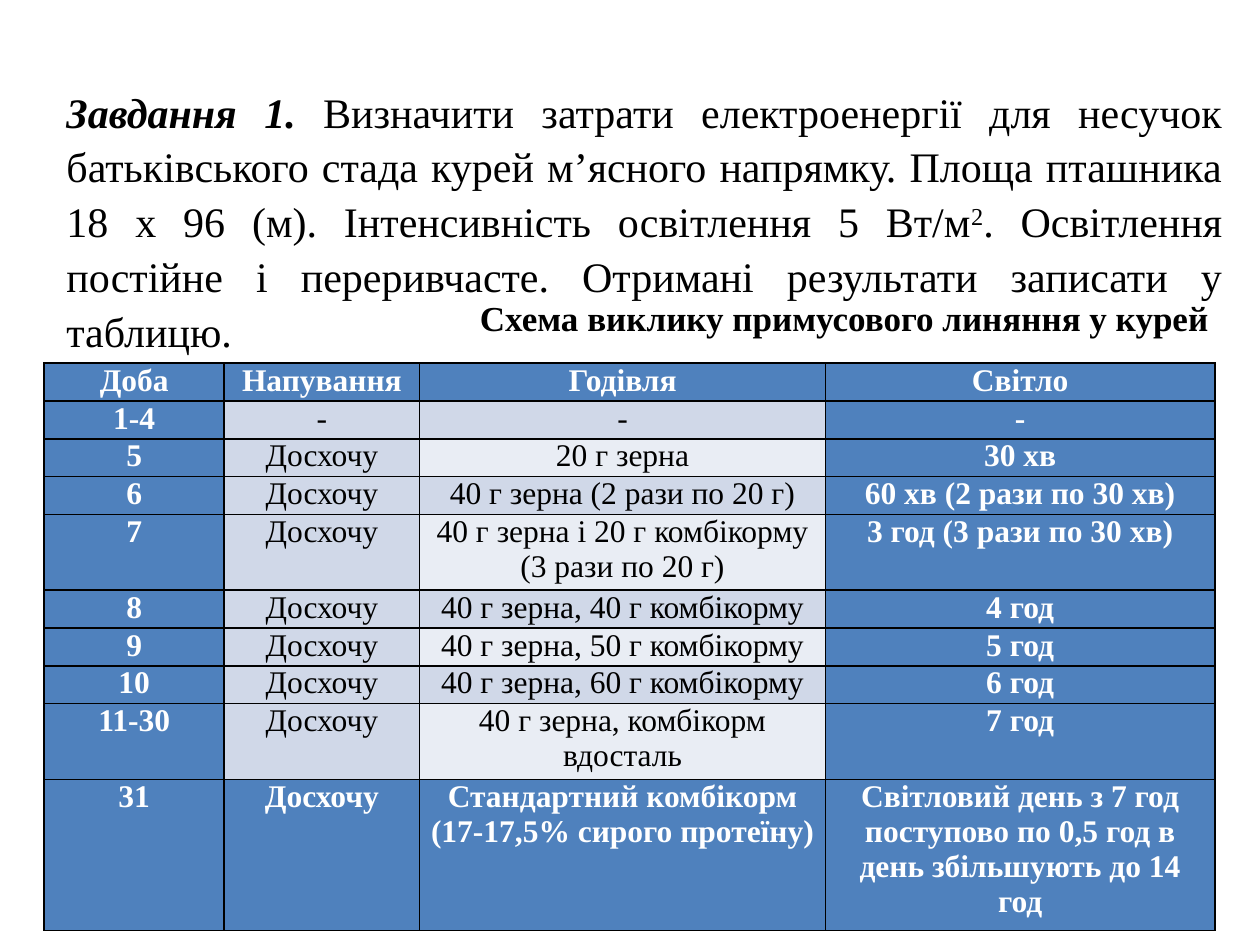
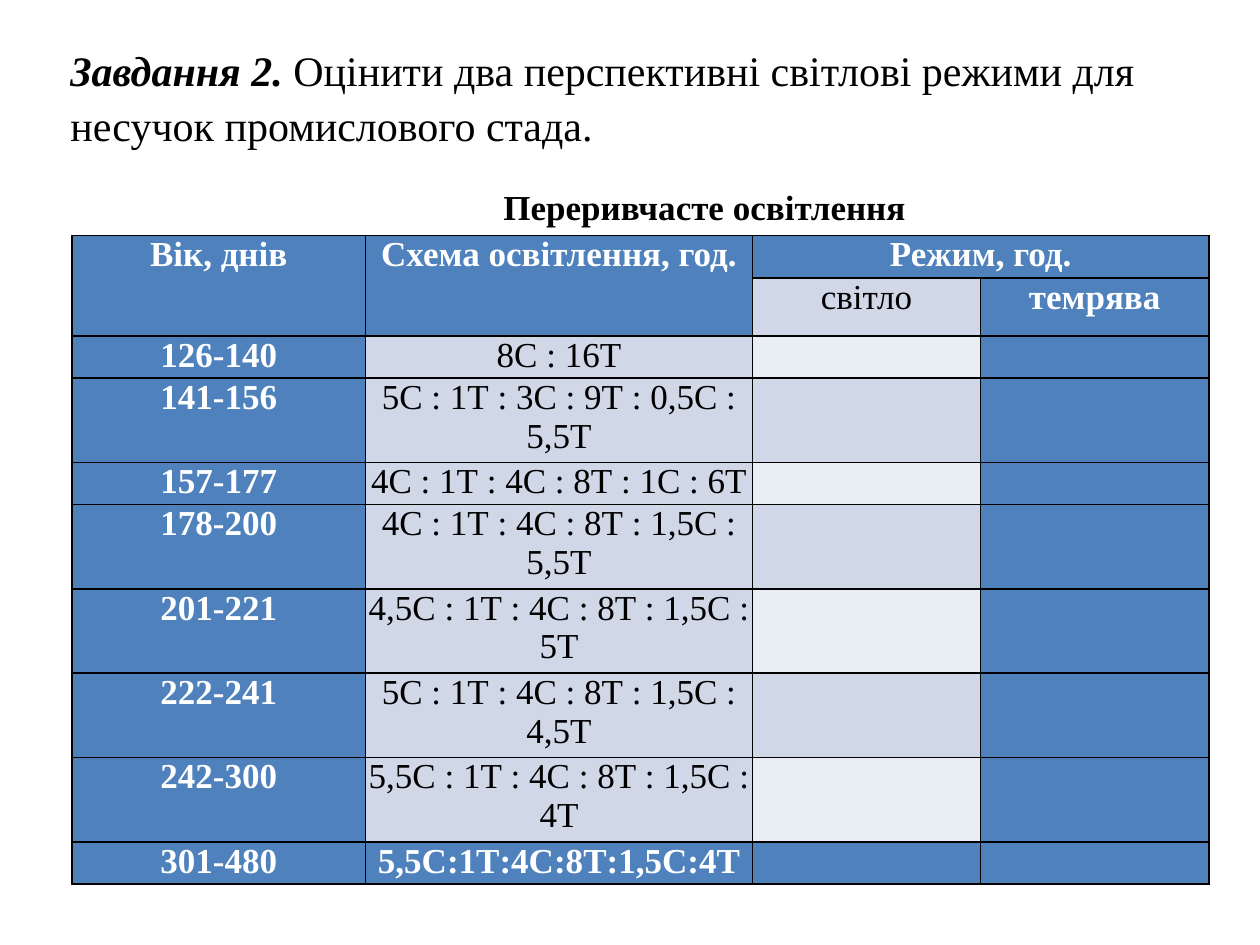
from pptx import Presentation
from pptx.dml.color import RGBColor
from pptx.enum.text import MSO_ANCHOR, PP_ALIGN
from pptx.oxml import parse_xml
from pptx.oxml.ns import nsdecls
from pptx.util import Cm, Pt

FONT = "Times New Roman"
BLACK, WHITE = "000000", "FFFFFF"
BLUE, BAND, LIGHT = "4F81BD", "D0D8E8", "E9EDF4"
BODY = {"name": FONT, "size": Pt(24)}
LEAD = {**BODY, "bold": True, "italic": True}
CAPTION = {"name": FONT, "size": Pt(20), "bold": True}

MOULT_ROWS = [
    ["Доба", "Напування", "Годівля", "Світло"],
    ["1-4", "-", "-", "-"],
    ["5", "Досхочу", "20 г зерна", "30 хв"],
    ["6", "Досхочу", "40 г зерна (2 рази по 20 г)", "60 хв (2 рази по 30 хв)"],
    ["7", "Досхочу", "40 г зерна і 20 г комбікорму (3 рази по 20 г)",
     "3 год (3 рази по 30 хв)"],
    ["8", "Досхочу", "40 г зерна, 40 г комбікорму", "4 год"],
    ["9", "Досхочу", "40 г зерна, 50 г комбікорму", "5 год"],
    ["10", "Досхочу", "40 г зерна, 60 г комбікорму", "6 год"],
    ["11-30", "Досхочу", "40 г зерна, комбікорм вдосталь", "7 год"],
    ["31", "Досхочу", "Стандартний комбікорм (17-17,5% сирого протеїну)",
     "Світловий день з 7 год поступово по 0,5 год в день збільшують до 14 год"],
]
LIGHT_SCHEMES = [
    ("126-140", "8С : 16Т"),
    ("141-156", "5С : 1Т : 3С : 9Т : 0,5С : 5,5Т"),
    ("157-177", "4С : 1Т : 4С : 8Т : 1С : 6Т"),
    ("178-200", "4С : 1Т : 4С : 8Т : 1,5С : 5,5Т"),
    ("201-221", "4,5С : 1Т : 4С : 8Т : 1,5С : 5Т"),
    ("222-241", "5С : 1Т : 4С : 8Т : 1,5С : 4,5Т"),
    ("242-300", "5,5С : 1Т : 4С : 8Т : 1,5С : 4Т"),
    ("301-480", "5,5С:1Т:4С:8Т:1,5С:4Т"),
]
LIGHT_ROWS = [
    ["Вік, днів", "Схема освітлення, год.", "Режим, год.", ""],
    ["", "", "світло", "темрява"],
    *[[age, scheme, "", ""] for age, scheme in LIGHT_SCHEMES],
]


def rgb(value):
    """Turn a hex string into a colour."""
    return RGBColor.from_string(value)


def add_run(p, text, fmt, color=BLACK):
    """Append a run with the given font values."""
    r = p.add_run()
    r.text = text
    for key, value in fmt.items():
        setattr(r.font, key, value)
    r.font.color.rgb = rgb(color)
    return r


def add_text(s, box, align, wrap=True):
    """Add a text box and return its frame and first paragraph."""
    tf = s.shapes.add_textbox(*map(Cm, box)).text_frame
    tf.word_wrap = wrap
    p = tf.paragraphs[0]
    p.alignment = align
    return tf, p


def add_task(s, box, number, parts, align=PP_ALIGN.LEFT):
    """Write the task heading; every second part is raised."""
    tf, p = add_text(s, box, align)
    p.line_spacing = 1.09
    add_run(p, f"Завдання {number}. ", LEAD)
    for i, part in enumerate(parts):
        r = add_run(p, part, BODY)
        if i % 2:
            r.font._element.set("baseline", "30000")


def add_caption(s, box, text, indent=0):
    """Write the bold title above a table."""
    tf, p = add_text(s, box, PP_ALIGN.CENTER, wrap=False)
    tf.vertical_anchor = MSO_ANCHOR.MIDDLE
    if indent:
        p._p.get_or_add_pPr().set("indent", str(Cm(indent)))
    add_run(p, text, CAPTION)


def add_borders(cell):
    """Draw a thin black line on all four sides of a cell."""
    tc_pr = cell._tc.get_or_add_tcPr()
    for i, side in enumerate("LRTB"):
        tc_pr.insert(i, parse_xml(
            f'<a:ln{side} {nsdecls("a")} w="{Pt(1)}"><a:solidFill>'
            f'<a:srgbClr val="{BLACK}"/></a:solidFill></a:ln{side}>'))


def fill_cell(cell, text, size, fill, margin):
    """Style one cell and write its centred text."""
    margins = {"margin_left": Cm(margin), "margin_right": Cm(margin),
               "margin_top": 0, "margin_bottom": 0}
    for key, value in margins.items():
        setattr(cell, key, value)
    cell.fill.solid()
    cell.fill.fore_color.rgb = rgb(fill)
    add_borders(cell)
    p = cell.text_frame.paragraphs[0]
    p.alignment = PP_ALIGN.CENTER
    if text:
        strong = fill == BLUE
        fmt = {"name": FONT, "size": Pt(size), "bold": strong}
        add_run(p, text, fmt, WHITE if strong else BLACK)


def add_grid(s, left, top, widths, heights, rows, size, margin=0, merges=()):
    """Add a table with a blue frame of cells and a banded middle."""
    shape = s.shapes.add_table(len(rows), len(widths), Cm(left), Cm(top),
                               Cm(sum(widths)), Cm(sum(heights)))
    table = shape.table
    table.first_row = table.horz_banding = False
    for col, width in zip(table.columns, widths):
        col.width = Cm(width)
    for row, height in zip(table.rows, heights):
        row.height = Cm(height)
    last_row, last_col = len(rows) - 1, len(widths) - 1
    for i, row in enumerate(rows):
        for j, text in enumerate(row):
            if i in (0, last_row) or j in (0, last_col):
                fill = BLUE
            else:
                fill = LIGHT if j == 2 and i % 2 == 0 else BAND
            fill_cell(table.cell(i, j), text, size, fill, margin)
    for start, end in merges:
        table.cell(*start).merge(table.cell(*end))


def build_moult_slide(s):
    """Build the task on electricity use and the forced moult scheme."""
    add_task(s, (1.09, 1.52, 23.8, 5.38), 1, [
        "Визначити затрати електроенергії для несучок батьківського стада курей "
        "м’ясного напрямку. Площа пташника 18 х 96 (м). Інтенсивність освітлення 5 Вт/м",
        "2",
        ". Освітлення постійне і переривчасте. Отримані результати записати у таблицю.",
    ], PP_ALIGN.JUSTIFY)
    line_counts = [1, 1, 1, 1, 2, 1, 1, 1, 2, 4]
    add_grid(s, 0.89, 7.32, [3.63, 3.94, 8.18, 7.85],
             [0.76 * n for n in line_counts], MOULT_ROWS, 18, margin=0.18)
    add_caption(s, (8.1, 5.84, 16.59, 1.12),
                "Схема виклику примусового линяння у курей", indent=1.25)


def build_light_slide(s):
    """Build the task on light regimes and the intermittent light table."""
    add_task(s, (1.17, 0.69, 23.19, 2.31), 2, [
        "Оцінити два перспективні світлові режими для несучок промислового стада."])
    line_counts = [1, 2, 1, 2, 2, 2, 2, 1]
    add_grid(s, 1.45, 4.75, [5.92, 7.8, 4.6, 4.6],
             [0.85, 1.17] + [0.85 * n for n in line_counts], LIGHT_ROWS, 20,
             merges=[((0, 0), (1, 0)), ((0, 1), (1, 1)), ((0, 2), (0, 3))])
    add_caption(s, (9.86, 3.61, 8.69, 1.12), "Переривчасте освітлення")


def main():
    """Build both slides and save the file."""
    prs = Presentation()
    prs.slide_width, prs.slide_height = Cm(25.4), Cm(19.05)
    for build in (build_moult_slide, build_light_slide):
        build(prs.slides.add_slide(prs.slide_layouts[6]))
    prs.save("out.pptx")


if __name__ == "__main__":
    main()
